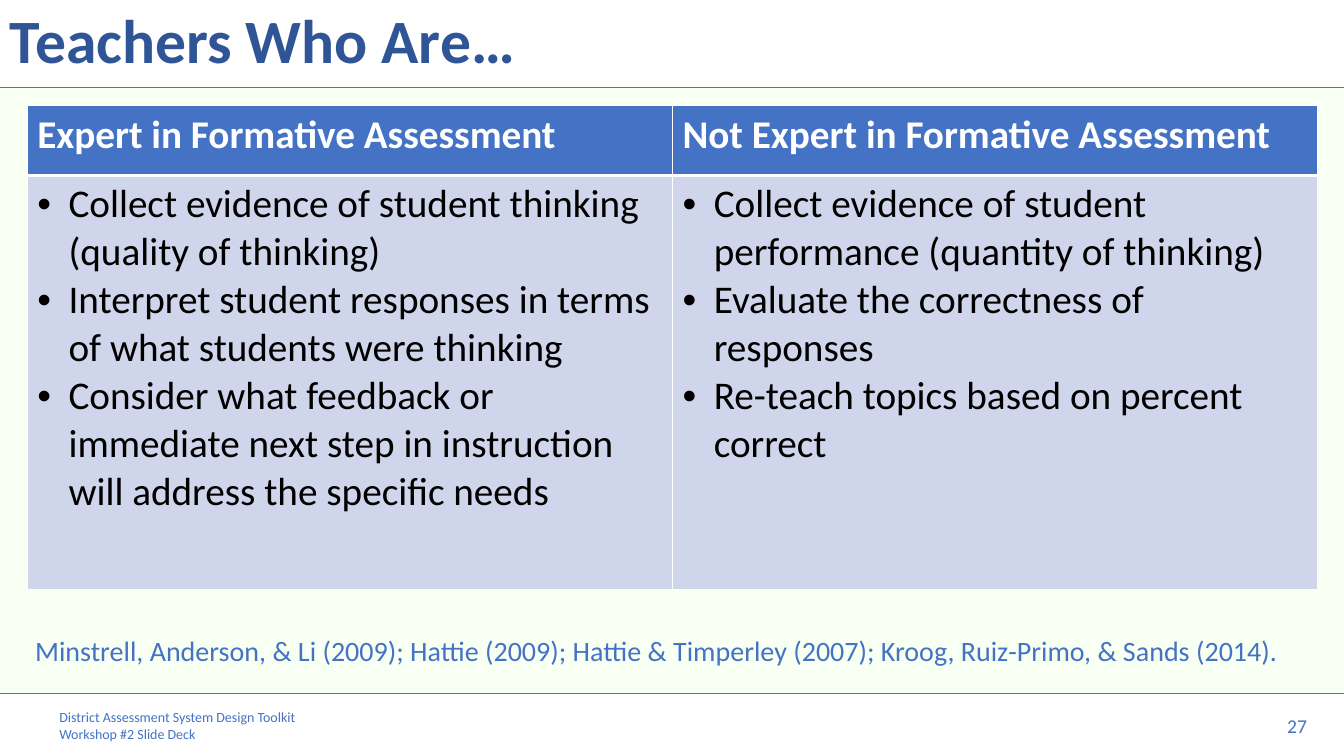
from lxml.etree import SubElement
from pptx import Presentation
from pptx.dml.color import RGBColor
from pptx.enum.shapes import MSO_CONNECTOR, MSO_SHAPE
from pptx.enum.text import MSO_ANCHOR, PP_ALIGN
from pptx.oxml import parse_xml
from pptx.oxml.ns import nsdecls, qn
from pptx.util import Pt

EMU_PER_PX = 9144
SLIDE_WIDTH, SLIDE_HEIGHT = 1333, 750
COLORS = {
    "white": "FFFFFF",
    "black": "000000",
    "blue": "4472C4",
    "title": "2F5597",
    "panel": "F8FFF3",
    "body": "CFD5EA",
}
COMPARISON = {
    "Expert in Formative Assessment": [
        "Collect evidence of student thinking (quality of thinking)",
        "Interpret student responses in terms of what students were thinking",
        "Consider what feedback or immediate next step in instruction will address the specific needs",
    ],
    "Not Expert in Formative Assessment": [
        "Collect evidence of student performance (quantity of thinking)",
        "Evaluate the correctness of responses",
        "Re-teach topics based on percent correct",
    ],
}
CITATION = (
    "Minstrell, Anderson, & Li (2009); Hattie (2009); Hattie & Timperley (2007); "
    "Kroog, Ruiz-Primo, & Sands (2014)."
)
TOOLKIT = ["District Assessment System Design Toolkit", "Workshop #2 Slide Deck"]


def px(length):
    return length * EMU_PER_PX


def rgb(color):
    return RGBColor.from_string(COLORS[color])


def apply(target, values):
    for attribute, value in values.items():
        setattr(target, attribute, value)


def write(frame, lines, size, color, bold=False, **paragraph_format):
    for index, line in enumerate(lines):
        paragraph = frame.add_paragraph() if index else frame.paragraphs[0]
        apply(paragraph, paragraph_format)
        run = paragraph.add_run()
        run.text = line
        apply(run.font, {"name": "Calibri", "size": Pt(size), "bold": bold})
        run.font.color.rgb = rgb(color)


def add_band(slide, top, height, color):
    band = slide.shapes.add_shape(
        MSO_SHAPE.RECTANGLE, 0, px(top), px(SLIDE_WIDTH), px(height)
    )
    band.shadow.inherit = False
    band.fill.solid()
    band.fill.fore_color.rgb = rgb(color)
    band.line.fill.background()
    return band


def add_rule(slide, y):
    rule = slide.shapes.add_connector(
        MSO_CONNECTOR.STRAIGHT, 0, px(y), px(SLIDE_WIDTH), px(y)
    )
    rule.line.color.rgb = rgb("blue")
    rule.line.width = Pt(0.5)
    SubElement(rule._element.spPr, qn("a:effectLst"))


def add_label(slide, box, lines, size, wrap=False, **paragraph_format):
    label = slide.shapes.add_textbox(*map(px, box))
    label.text_frame.word_wrap = wrap
    write(label.text_frame, lines, size, "blue", **paragraph_format)


def add_title(slide, title):
    band = add_band(slide, 0, 86, "white")
    apply(band.text_frame, {"word_wrap": True, "vertical_anchor": MSO_ANCHOR.MIDDLE})
    write(band.text_frame, [title], 44, "title", True,
          alignment=PP_ALIGN.LEFT, line_spacing=0.9)


def style_cell(cell, color, bottom_width):
    cell.fill.solid()
    cell.fill.fore_color.rgb = rgb(color)
    widths = {"lnL": 1, "lnR": 1, "lnT": 1, "lnB": bottom_width}
    for position, (side, width) in enumerate(widths.items()):
        border = parse_xml(
            f'<a:{side} {nsdecls("a")} w="{Pt(width)}"><a:solidFill>'
            f'<a:srgbClr val="{COLORS["white"]}"/></a:solidFill></a:{side}>'
        )
        cell._tc.get_or_add_tcPr().insert(position, border)


def add_bullets(frame, indent):
    for paragraph in frame.paragraphs:
        properties = paragraph._p.get_or_add_pPr()
        properties.set("marL", str(px(indent)))
        properties.set("indent", str(-px(indent)))
        SubElement(properties, qn("a:buFont"), typeface="Arial")
        SubElement(properties, qn("a:buChar"), char="•")


def add_comparison(slide, box, row_heights):
    table = slide.shapes.add_table(2, len(COMPARISON), *map(px, box)).table
    for row, height in zip(table.rows, row_heights):
        row.height = px(height)
    for column, (heading, practices) in enumerate(COMPARISON.items()):
        header, body = table.cell(0, column), table.cell(1, column)
        style_cell(header, "blue", 3)
        write(header.text_frame, [heading], 28, "white", True)
        style_cell(body, "body", 1)
        write(body.text_frame, practices, 28, "black")
        add_bullets(body.text_frame, 31)
    for row in (0, 1):
        for column in range(len(COMPARISON)):
            table.cell(row, column).vertical_anchor = MSO_ANCHOR.TOP


def main():
    deck = Presentation()
    apply(deck, {"slide_width": px(SLIDE_WIDTH), "slide_height": px(SLIDE_HEIGHT)})
    slide = deck.slides.add_slide(deck.slide_layouts[6])
    add_band(slide, 86, 601, "panel")
    add_title(slide, "Teachers Who Are…")
    for y in (87, 688):
        add_rule(slide, y)
    add_label(slide, (49, 698, 259, 44), TOOLKIT, 10)
    add_label(slide, (1265, 703, 43, 34), ["27"], 14, alignment=PP_ALIGN.CENTER)
    add_comparison(slide, (27, 105, 1280, 480), (69, 411))
    add_label(slide, (25, 627, 1283, 40), [CITATION], 20, wrap=True,
              line_spacing=0.9, space_before=Pt(10))
    deck.save("out.pptx")


if __name__ == "__main__":
    main()
